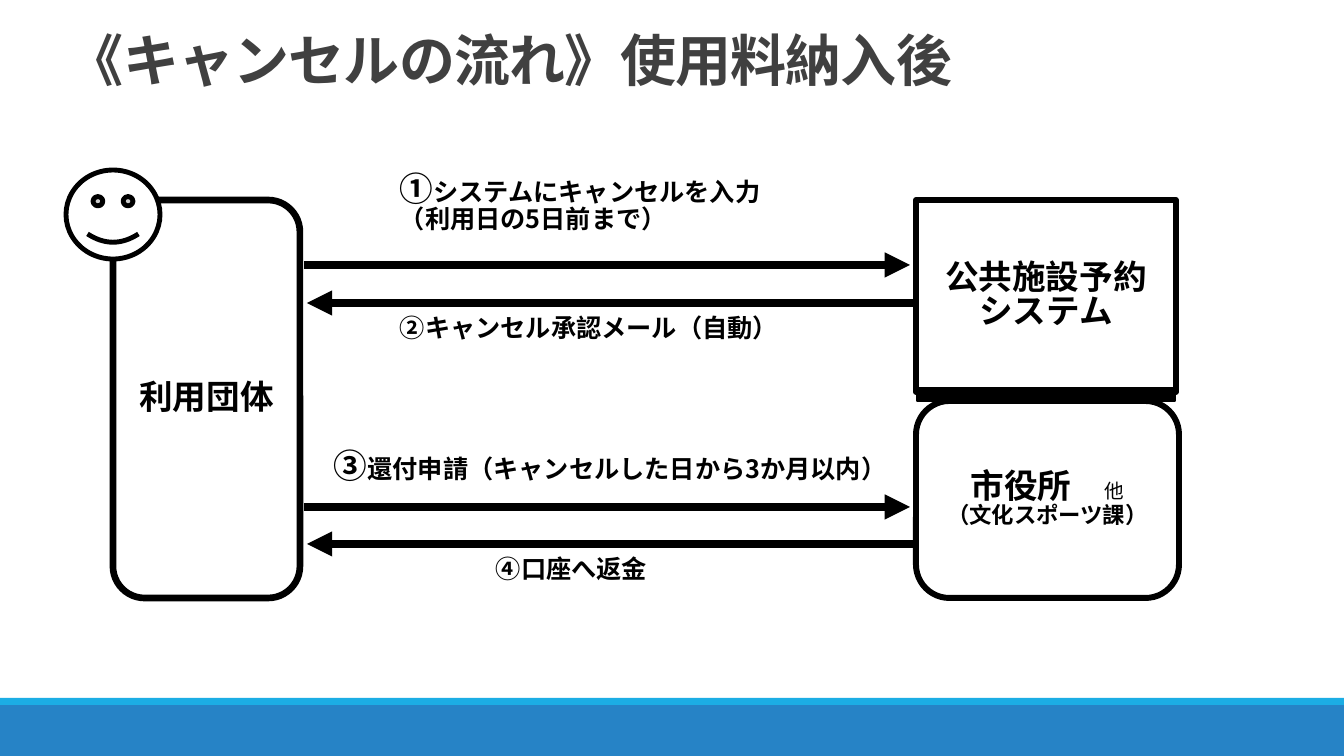
from lxml import etree
from pptx import Presentation
from pptx import util as u
from pptx.dml.color import RGBColor
from pptx.enum import shapes, text
from pptx.oxml.ns import qn

SCALE = 914400 / 100.8
FONT = "Noto Sans CJK JP"
COLORS = {"ink": "000000", "paper": "FFFFFF", "title": "404040", "band": "2683C6", "stripe": "1CADE4"}
KIND = shapes.MSO_SHAPE


def px(length):
    return u.Emu(round(length * SCALE))


def color(name):
    return RGBColor.from_string(COLORS[name])


def write(frame, lines, align=text.PP_ALIGN.LEFT, anchor=text.MSO_ANCHOR.TOP, ink="ink", font=FONT, spacing=None):
    frame.word_wrap = True
    frame.vertical_anchor = anchor
    for index, line in enumerate(lines):
        para = frame.paragraphs[0] if index == 0 else frame.add_paragraph()
        para.alignment = align
        para.line_spacing = spacing
        for words, size, bold in line:
            span = para.add_run()
            span.text = words
            span.font.size = u.Pt(size)
            span.font.bold = bold
            span.font.name = font
            span.font.color.rgb = color(ink)
            east_asian = etree.SubElement(span.font._element, qn("a:ea"))
            east_asian.set("typeface", FONT)


def add_block(page, kind, box, fill="paper", line=None, lines=()):
    block = page.shapes.add_shape(kind, *map(px, box))
    block.shadow.inherit = False
    block.fill.solid()
    block.fill.fore_color.rgb = color(fill)
    if line:
        block.line.color.rgb = color("ink")
        block.line.width = u.Pt(line)
    else:
        block.line.fill.background()
    write(block.text_frame, lines, text.PP_ALIGN.CENTER, text.MSO_ANCHOR.MIDDLE, spacing=0.85)
    return block


def add_label(page, box, lines, **style):
    label = page.shapes.add_textbox(*map(px, box))
    write(label.text_frame, lines, **style)
    return label


def add_arrow(page, start, end):
    arrow = page.shapes.add_connector(shapes.MSO_CONNECTOR.STRAIGHT, *map(px, start + end))
    arrow.line.color.rgb = color("ink")
    arrow.line.width = u.Pt(6)
    etree.SubElement(arrow.line._get_or_add_ln(), qn("a:tailEnd"), type="triangle")
    etree.SubElement(arrow._element.spPr, qn("a:effectLst"))


def add_footer(page, left, top, width, height):
    stripe = 7
    add_block(page, KIND.RECTANGLE, (left, top + stripe, width, height - stripe), "band")
    add_block(page, KIND.RECTANGLE, (left, top, width, stripe), "stripe")


def add_title(page, left, top, width, height):
    title = add_label(page, (left, top, width, height), [[("《キャンセルの流れ》使用料納入後", 40, True)]],
                      ink="title", font="Calibri", spacing=0.85)
    title.text_frame.paragraphs[0].runs[0].font._element.set("spc", "-50")


def add_group(page, left, top, width, height):
    group = add_block(page, KIND.ROUNDED_RECTANGLE, (left, top, width, height), line=4.75,
                      lines=[[("利用団体", 24, True)]])
    group.adjustments[0] = 0.17
    add_block(page, KIND.SMILEY_FACE, (left - 47, top - 30, 94, 89), line=3.5)


def add_offices(page, left, top, width, height):
    hall_top = top + 201
    hall = add_block(page, KIND.ROUNDED_RECTANGLE, (left, hall_top, width, top + height - hall_top), line=4.25,
                     lines=[[("市役所\u3000".replace("\u3000", "　"), 24, True), ("他", 14, False)],
                            [("（文化スポーツ課）", 16, True)]])
    hall.adjustments[0] = 0.17
    add_block(page, KIND.RECTANGLE, (left, top, width - 3, 192), line=4.25,
              lines=[[("公共施設予約", 24, True)], [("システム", 24, True)]])
    add_block(page, KIND.RECTANGLE, (left + 1, top + 188, width - 5, 13), "ink", 1.25)


def add_exchange(page, left, top, width, height):
    right = left + width
    for y, there in ((65, True), (103, False), (307, True), (344, False)):
        ends = (left, top + y), (right - 6, top + y)
        if not there:
            ends = (right, top + y), (left + 3, top + y)
        add_arrow(page, *ends)
    notes = [
        ((86, -31, 424, 108), [[("①", 24, True), ("システムにキャンセルを入力", 18, True)],
                               [("（利用日の5日前まで）", 18, True)]]),
        ((86, 112, 406, 54), [[("②キャンセル承認メール（自動）", 18, True)]]),
        ((20, 246, 590, 68), [[("③", 24, True), ("還付申請（キャンセルした日から3か月以内）", 18, True)]]),
        ((182, 353, 214, 54), [[("④口座へ返金", 18, True)]]),
    ]
    for (x, y, wide, high), lines in notes:
        add_label(page, (left + x, top + y, wide, high), lines, spacing=0.85)


def main():
    deck = Presentation()
    deck.slide_width, deck.slide_height = px(1344), px(756)
    page = deck.slides.add_slide(deck.slide_layouts[6])
    add_footer(page, 0, 698, 1344, 58)
    add_title(page, 58, 31, 1229, 84)
    add_group(page, 113, 200, 187, 398)
    add_offices(page, 916, 200, 263, 398)
    add_exchange(page, 304, 200, 612, 398)
    deck.save("out.pptx")


if __name__ == "__main__":
    main()
